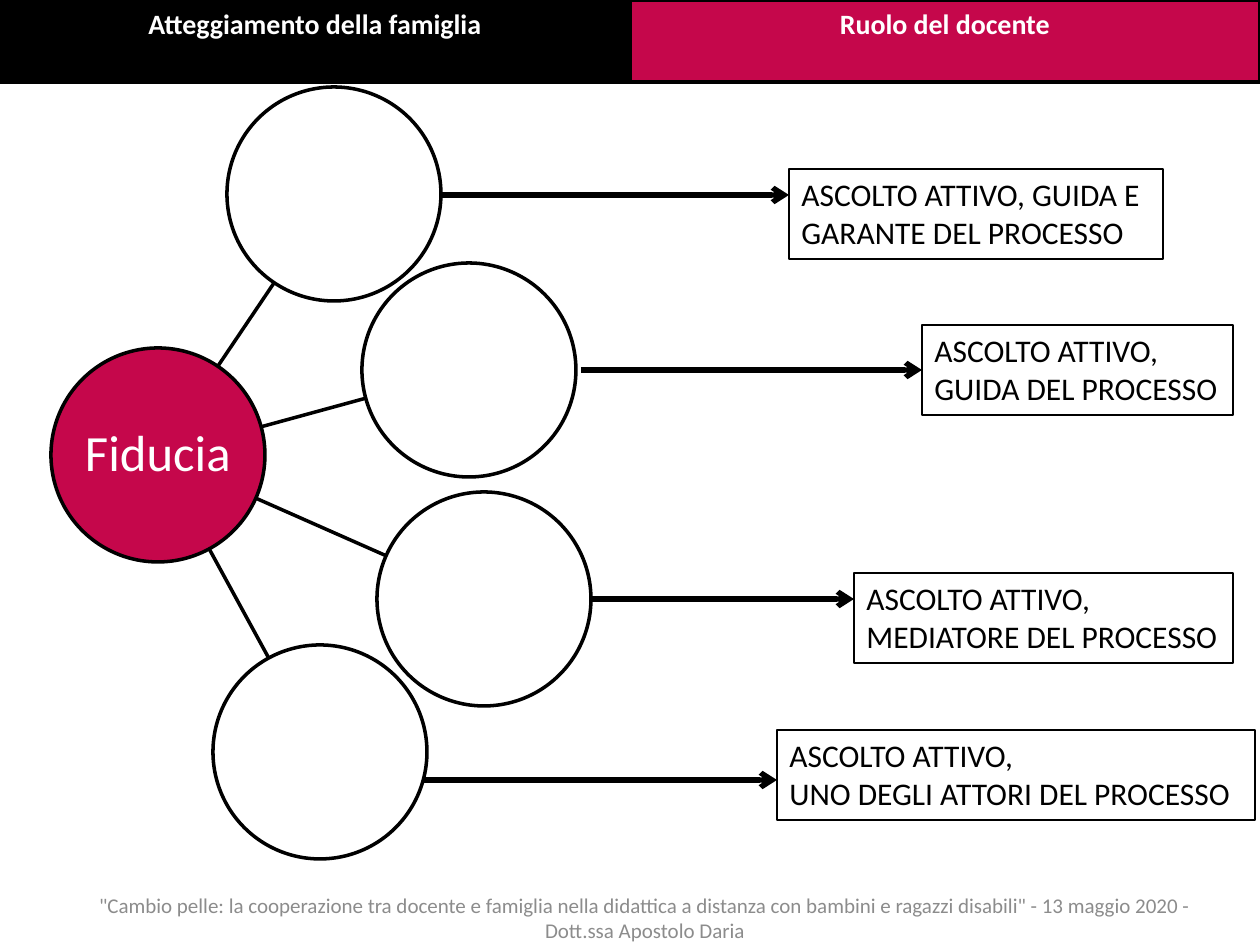
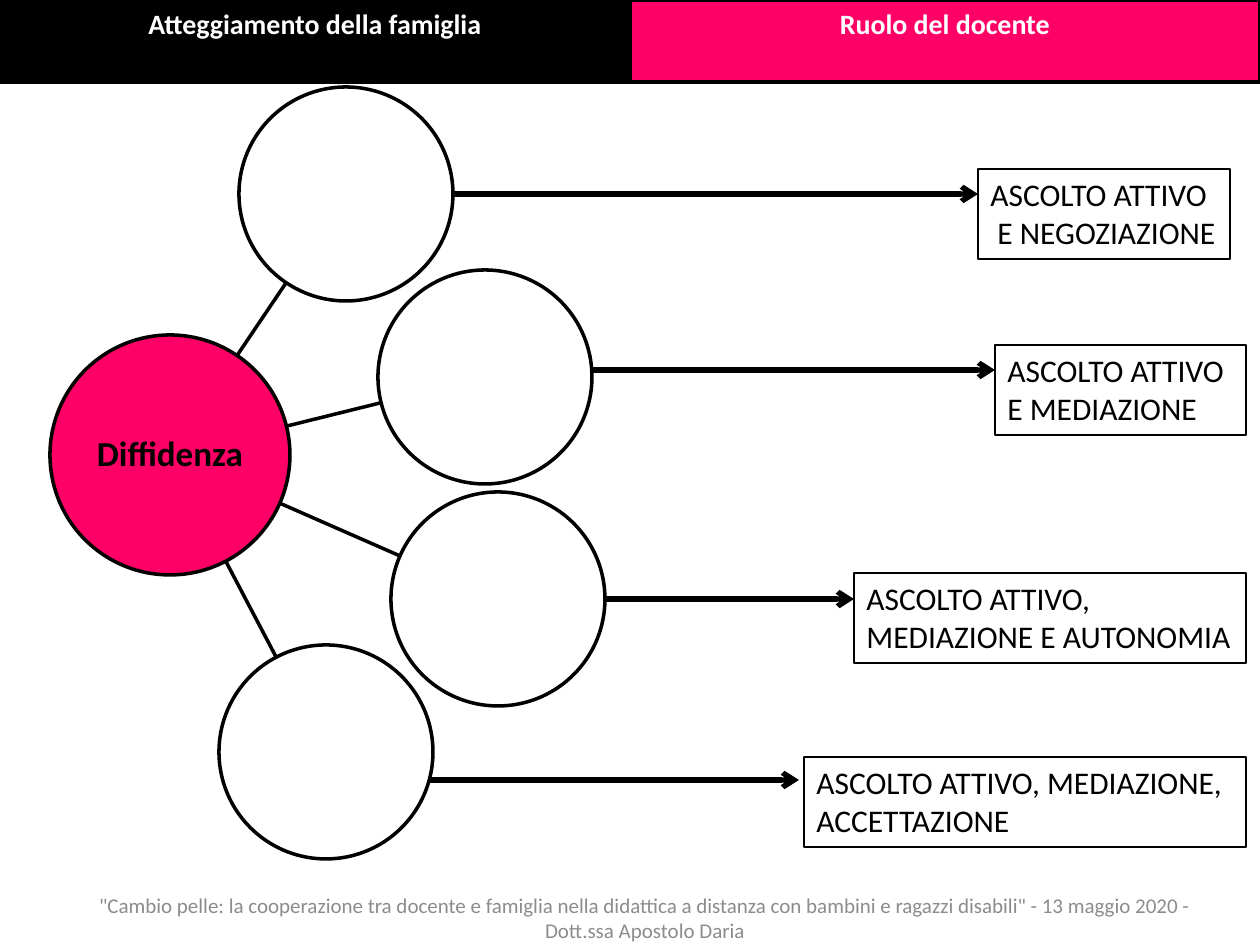
from math import hypot

from lxml.etree import SubElement
from pptx import Presentation
from pptx.dml.color import RGBColor
from pptx.enum.shapes import MSO_CONNECTOR, MSO_SHAPE
from pptx.enum.text import MSO_ANCHOR, MSO_AUTO_SIZE, PP_ALIGN
from pptx.oxml.ns import qn
from pptx.util import Pt

PX = 914400 / 126
FONT = "Calibri"
COLORS = {
    "black": "000000",
    "white": "FFFFFF",
    "grey": "8C8C8C",
    "crimson": "C5074B",
    "magenta": "FF0066",
}
FOOTER = (
    '"Cambio pelle: la cooperazione tra docente e famiglia nella didattica a distanza '
    'con bambini e ragazzi disabili" - 13 maggio 2020 - Dott.ssa Apostolo Daria'
)
BAND_WIDTH, BAND_HEIGHT = 630, 82
ATTITUDE_RADIUS = 107
ROLE_HEIGHT = 90

TOPICS = [
    {
        "accent": "crimson",
        "layers": ["circles", "roles"],
        "hub": ("Fiducia", 158, 455, 107),
        "hub_text": (29, "white", False),
        "attitudes": [(334, 194), (484, 599), (320, 752), (469, 370)],
        "roles": [
            (["ASCOLTO ATTIVO, GUIDA E", "GARANTE DEL PROCESSO"],
             (789, 169, 374), (441, 789, 195)),
            (["ASCOLTO ATTIVO,", "GUIDA DEL PROCESSO"],
             (922, 325, 311), (581, 922, 370)),
            (["ASCOLTO ATTIVO,", "MEDIATORE DEL PROCESSO"],
             (854, 573, 379), (591, 854, 599)),
            (["ASCOLTO ATTIVO,", "UNO DEGLI ATTORI DEL PROCESSO"],
             (777, 730, 478), (422, 777, 780)),
        ],
    },
    {
        "accent": "magenta",
        "layers": ["roles", "circles"],
        "hub": ("Diffidenza", 170, 455, 120),
        "hub_text": (20, "black", True),
        "attitudes": [(346, 194), (498, 599), (326, 752), (485, 377)],
        "roles": [
            (["ASCOLTO ATTIVO", " E NEGOZIAZIONE"],
             (978, 169, 252), (422, 978, 194)),
            (["ASCOLTO ATTIVO", "E MEDIAZIONE"],
             (995, 345, 251), (581, 995, 370)),
            (["ASCOLTO ATTIVO,", "MEDIAZIONE E AUTONOMIA"],
             (854, 573, 392), (591, 854, 599)),
            (["ASCOLTO ATTIVO, MEDIAZIONE,", "ACCETTAZIONE"],
             (804, 757, 442), (422, 799, 780)),
        ],
    },
]


def px(*lengths):
    return [round(length * PX) for length in lengths]


def write(frame, lines, size, color, align=PP_ALIGN.CENTER, bold=False):
    for number, line in enumerate(lines):
        paragraph = frame.add_paragraph() if number else frame.paragraphs[0]
        paragraph.alignment = align
        run = paragraph.add_run()
        run.text = line
        run.font.name = FONT
        run.font.size = Pt(size)
        run.font.bold = bold
        run.font.color.rgb = RGBColor.from_string(COLORS[color])


presentation = Presentation()
presentation.slide_width, presentation.slide_height = px(1260, 945)

for topic in TOPICS:
    slide = presentation.slides.add_slide(presentation.slide_layouts[6])
    shapes = slide.shapes
    filled = []
    lines = []

    footer = shapes.add_textbox(*px(84, 890, 1122, 55)).text_frame
    footer.word_wrap = True
    footer.vertical_anchor = MSO_ANCHOR.MIDDLE
    write(footer, [FOOTER], 12, "grey")

    for layer in topic["layers"]:
        if layer == "circles":
            name, hub_x, hub_y, hub_radius = topic["hub"]
            hub = shapes.add_shape(
                MSO_SHAPE.OVAL,
                *px(hub_x - hub_radius, hub_y - hub_radius, 2 * hub_radius, 2 * hub_radius))
            filled.append((hub, topic["accent"]))
            frame = hub.text_frame
            frame.margin_left = frame.margin_right = 0
            frame.vertical_anchor = MSO_ANCHOR.MIDDLE
            size, color, bold = topic["hub_text"]
            write(frame, [name], size, color, bold=bold)
            frame.paragraphs[0].line_spacing = 0.9

            for x, y in topic["attitudes"]:
                distance = hypot(x - hub_x, y - hub_y)
                across, down = (x - hub_x) / distance, (y - hub_y) / distance
                spoke = shapes.add_connector(
                    MSO_CONNECTOR.STRAIGHT,
                    *px(hub_x + across * hub_radius, hub_y + down * hub_radius,
                        x - across * ATTITUDE_RADIUS, y - down * ATTITUDE_RADIUS))
                lines.append((spoke, 2, False))
                attitude = shapes.add_shape(
                    MSO_SHAPE.OVAL,
                    *px(x - ATTITUDE_RADIUS, y - ATTITUDE_RADIUS,
                        2 * ATTITUDE_RADIUS, 2 * ATTITUDE_RADIUS))
                filled.append((attitude, "white"))
        else:
            for text, (left, top, width), (start, end, y) in topic["roles"]:
                role = shapes.add_textbox(*px(left, top, width, ROLE_HEIGHT))
                role.line.color.rgb = RGBColor.from_string(COLORS["black"])
                role.line.width = Pt(0.75)
                role.text_frame.word_wrap = False
                role.text_frame.auto_size = MSO_AUTO_SIZE.SHAPE_TO_FIT_TEXT
                write(role.text_frame, text, 18, "black", PP_ALIGN.LEFT)
                arrow = shapes.add_connector(MSO_CONNECTOR.STRAIGHT, *px(start, y, end, y))
                if (end, y) == (left, top + ROLE_HEIGHT // 2):
                    arrow.end_connect(role, 1)
                lines.append((arrow, 3, True))

    for heading, left, color in [
        ("Ruolo del docente", BAND_WIDTH, topic["accent"]),
        ("Atteggiamento della famiglia", 0, "black"),
    ]:
        band = shapes.add_shape(MSO_SHAPE.RECTANGLE, *px(left, 0, BAND_WIDTH, BAND_HEIGHT))
        filled.append((band, color))
        band.text_frame.vertical_anchor = MSO_ANCHOR.TOP
        write(band.text_frame, [heading], 16, "white", bold=True)

    for shape, color in filled:
        shape.shadow.inherit = False
        shape.fill.solid()
        shape.fill.fore_color.rgb = RGBColor.from_string(COLORS[color])
        shape.line.color.rgb = RGBColor.from_string(COLORS["black"])
        shape.line.width = Pt(2)

    for connector, width, has_arrowhead in lines:
        connector.line.color.rgb = RGBColor.from_string(COLORS["black"])
        connector.line.width = Pt(width)
        properties = connector.element.spPr
        if has_arrowhead:
            SubElement(properties.find(qn("a:ln")), qn("a:tailEnd"), type="arrow")
        SubElement(properties, qn("a:effectLst"))

presentation.save("out.pptx")
